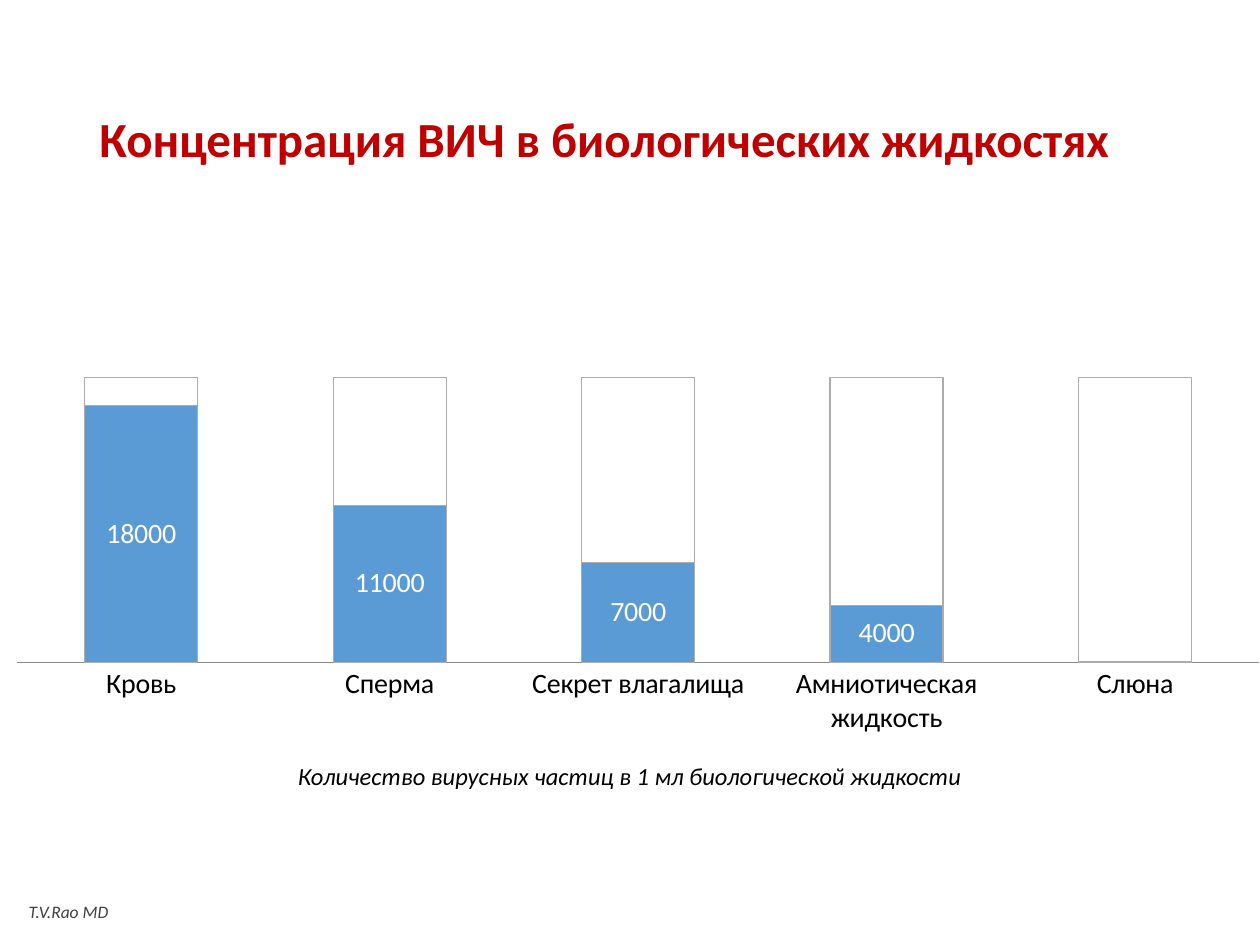
"""Build a slide with a stacked column chart of HIV concentration in body fluids."""
from lxml import etree
from pptx import Presentation
from pptx import util as u
from pptx.chart.data import CategoryChartData
from pptx.dml.color import RGBColor
from pptx.enum import chart as ch, text
from pptx.oxml import parse_xml

COLORS = {"title": "C00000", "bar": "5B9BD5", "line": "AFABAB", "axis": "898989",
          "text": "000000", "label": "FFFFFF", "credit": "404040"}


def style(font, size, color, bold=False, italic=False):
    font.name = "Calibri"
    font.size = u.Pt(size)
    font.bold = bold
    font.italic = italic
    font.color.rgb = RGBColor.from_string(COLORS[color])


prs = Presentation()
prs.slide_width, prs.slide_height = u.Cm(25.4), u.Cm(19.05)
s = prs.slides.add_slide(prs.slide_layouts[5])

title = s.shapes.title
title.left, title.top, title.width, title.height = u.Cm(1.75), u.Cm(1.02), u.Cm(21.9), u.Cm(3.68)
tf = title.text_frame
tf.text = "Концентрация ВИЧ в биологических жидкостях"
tf.vertical_anchor = text.MSO_ANCHOR.MIDDLE
p = tf.paragraphs[0]
p.alignment = text.PP_ALIGN.LEFT
p.line_spacing = 0.9
style(p.runs[0].font, 28, "title", bold=True)

FULL = 20000
counts = [18000, 11000, 7000, 4000, 1]
data = CategoryChartData()
data.categories = ["Кровь", "Сперма", "Секрет влагалища", "Амниотическая жидкость", "Слюна"]
data.add_series("Series 1", counts)
data.add_series("Series 2", [FULL - round(n, -3) for n in counts])
chart = s.shapes.add_chart(ch.XL_CHART_TYPE.COLUMN_STACKED, u.Cm(0.33), u.Cm(6.17),
                           u.Cm(25.07), u.Cm(9.45), data).chart
chart.has_legend = False
chart.has_title = False
style(chart.font, 18, "text")

val = chart.value_axis
val.minimum_scale, val.maximum_scale = 0, 25000
val.has_major_gridlines = False
val.visible = False
cat = chart.category_axis
cat.major_tick_mark = ch.XL_TICK_MARK.NONE
cat.format.line.color.rgb = RGBColor.from_string(COLORS["axis"])
cat.format.line.width = u.Pt(0.75)
style(cat.tick_labels.font, 16, "text")

plot = chart.plots[0]
plot.gap_width, plot.overlap = 120, 100
plot.vary_by_categories = False
for series in plot.series:
    series.invert_if_negative = False
    series.format.line.color.rgb = RGBColor.from_string(COLORS["line"])
    series.format.line.width = u.Pt(0.75)
filled, rest = plot.series
filled.format.fill.solid()
filled.format.fill.fore_color.rgb = RGBColor.from_string(COLORS["bar"])
rest.format.fill.background()
labels = filled.data_labels
labels.show_value = True
labels.number_format = '[>=1000]0;""'
labels.number_format_is_linked = False
labels.position = ch.XL_LABEL_POSITION.CENTER
style(labels.font, 16, "label")

C = "http://schemas.openxmlformats.org/drawingml/2006/chart"
area = chart._chartSpace.find(f".//{{{C}}}plotArea")
for old in area.findall(f"{{{C}}}layout"):
    area.remove(old)
layout = parse_xml(f'<c:layout xmlns:c="{C}"><c:manualLayout/></c:layout>')
for tag, value in [("layoutTarget", "inner"), ("xMode", "edge"), ("yMode", "edge"),
                   ("x", "0"), ("y", "0"), ("w", "1"), ("h", "0.76")]:
    etree.SubElement(layout[0], f"{{{C}}}{tag}").set("val", value)
area.insert(0, layout)

for words, left, top, width, height, size, color, align in [
    ("Количество вирусных частиц в 1 мл биологической жидкости",
     3.35, 15.21, 18.7, 0.86, 14, "text", text.PP_ALIGN.CENTER),
    ("T.V.Rao MD", 0.33, 18.03, 3.35, 0.68, 10, "credit", text.PP_ALIGN.LEFT),
]:
    tf = s.shapes.add_textbox(u.Cm(left), u.Cm(top), u.Cm(width), u.Cm(height)).text_frame
    tf.word_wrap = True
    tf.auto_size = text.MSO_AUTO_SIZE.SHAPE_TO_FIT_TEXT
    tf.text = words
    p = tf.paragraphs[0]
    p.alignment = align
    style(p.runs[0].font, size, color, italic=True)

prs.save("out.pptx")
